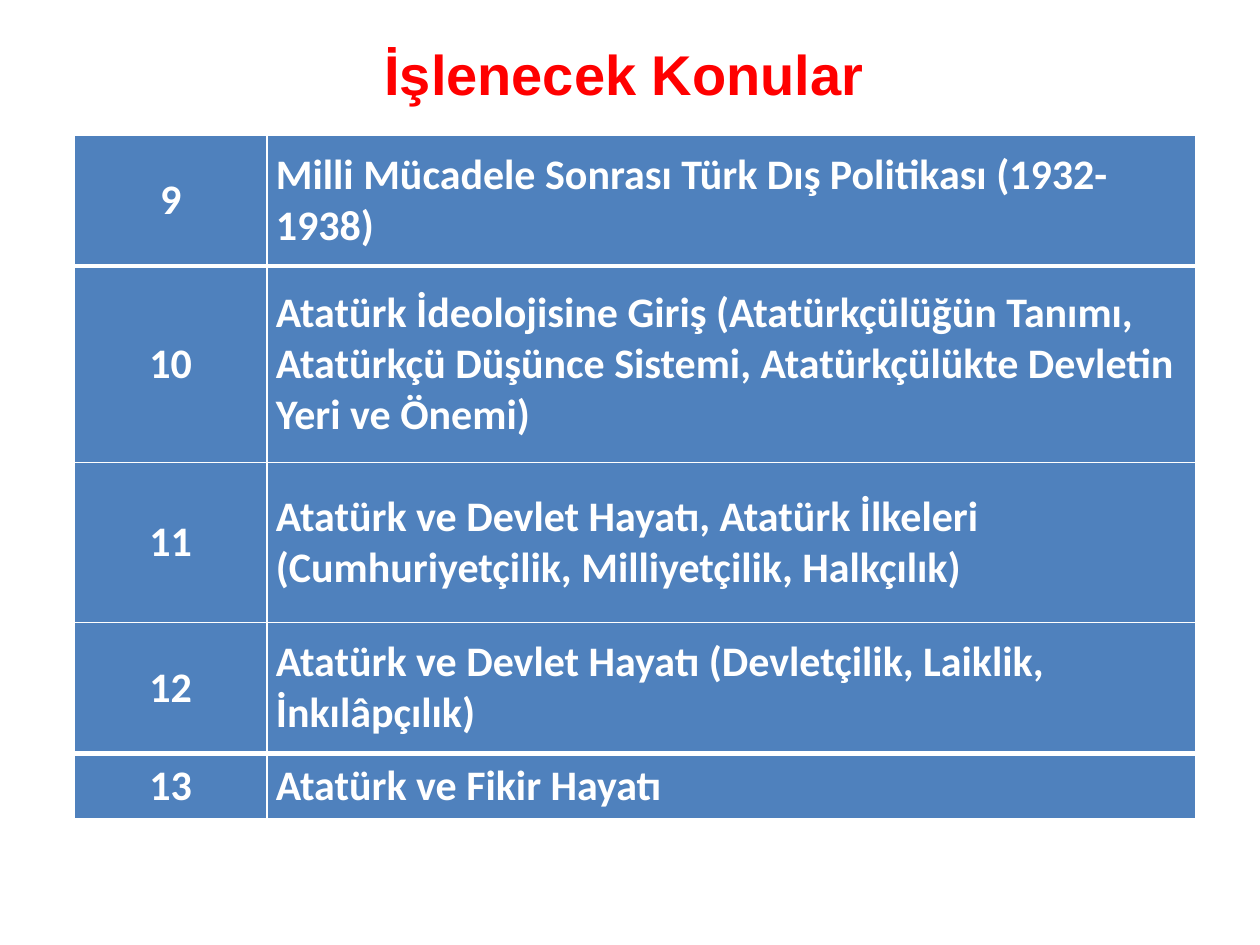
"""Build the slide that lists the course topics by week."""
from lxml.etree import SubElement
from pptx import Presentation
from pptx.dml.color import RGBColor
from pptx.enum.text import MSO_ANCHOR, PP_ALIGN
from pptx.oxml.ns import qn
from pptx.util import Inches, Pt

COLORS = {"title": "FF0000", "cell": "4F81BD", "text": "FFFFFF", "line": "FFFFFF"}
COLS = (1.53, 7.37)
ROWS = (
    (1.04, "9", "Milli Mücadele Sonrası Türk Dış Politikası (1932-1938)"),
    (1.56, "10", "Atatürk İdeolojisine Giriş (Atatürkçülüğün Tanımı, Atatürkçü "
                 "Düşünce Sistemi, Atatürkçülükte Devletin Yeri ve Önemi)"),
    (1.27, "11", "Atatürk ve Devlet Hayatı, Atatürk İlkeleri "
                 "(Cumhuriyetçilik, Milliyetçilik, Halkçılık)"),
    (1.04, "12", "Atatürk ve Devlet Hayatı (Devletçilik, Laiklik, İnkılâpçılık)"),
    (0.52, "13", "Atatürk ve Fikir Hayatı"),
)
EDGES = (1, 3, 1, 1, 3, 1)


class Deck:
    """Hold the style and the current slide."""

    def __init__(self, slide):
        self.slide = slide

    def label(self, frame, text, font, size, color, align):
        frame.word_wrap = True
        para = frame.paragraphs[0]
        para.alignment = align
        run = para.add_run()
        run.text = text
        run.font.name = font
        run.font.size = Pt(size)
        run.font.bold = True
        run.font.color.rgb = RGBColor.from_string(COLORS[color])

    def title(self, text, left, top, width, height):
        box = self.slide.shapes.add_textbox(
            Inches(left), Inches(top), Inches(width), Inches(height))
        box.text_frame.vertical_anchor = MSO_ANCHOR.MIDDLE
        self.label(box.text_frame, text, "Arial", 32, "title", PP_ALIGN.CENTER)

    def border(self, cell, side, width):
        line = SubElement(cell._tc.get_or_add_tcPr(), qn(f"a:ln{side}"), w=str(Pt(width)))
        fill = SubElement(line, qn("a:solidFill"))
        SubElement(fill, qn("a:srgbClr"), val=COLORS["line"])

    def cell(self, cell, text, align, top, bottom):
        cell.margin_left = cell.margin_right = Inches(0.07)
        cell.margin_top = cell.margin_bottom = 0
        cell.vertical_anchor = MSO_ANCHOR.MIDDLE
        for side, width in zip("LRTB", (1, 1, top, bottom)):
            self.border(cell, side, width)
        cell.fill.solid()
        cell.fill.fore_color.rgb = RGBColor.from_string(COLORS["cell"])
        self.label(cell.text_frame, text, "Calibri", 24, "text", align)

    def table(self, left, top):
        height = sum(row[0] for row in ROWS)
        table = self.slide.shapes.add_table(
            len(ROWS), len(COLS), Inches(left), Inches(top),
            Inches(sum(COLS)), Inches(height)).table
        for col, width in zip(table.columns, COLS):
            col.width = Inches(width)
        for i, (height, *texts) in enumerate(ROWS):
            table.rows[i].height = Inches(height)
            for j, (text, align) in enumerate(zip(texts, (PP_ALIGN.CENTER, PP_ALIGN.LEFT))):
                self.cell(table.cell(i, j), text, align, EDGES[i], EDGES[i + 1])


def main():
    prs = Presentation()
    prs.slide_width = Inches(10)
    prs.slide_height = Inches(7.5)
    deck = Deck(prs.slides.add_slide(prs.slide_layouts[6]))
    deck.title("İşlenecek Konular", 0.62, 0.23, 8.67, 0.7)
    deck.table(0.59, 1.07)
    prs.save("out.pptx")


if __name__ == "__main__":
    main()
